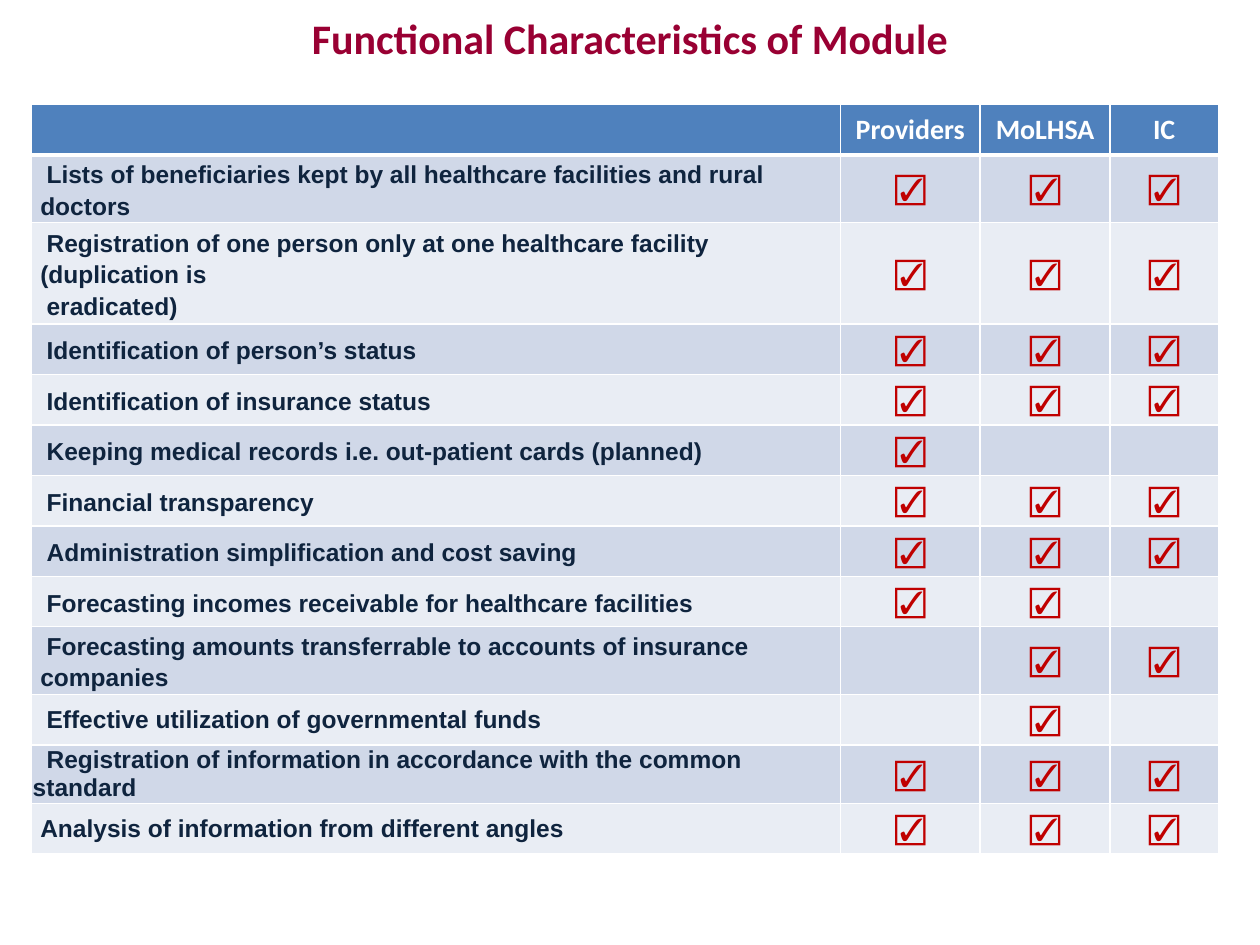
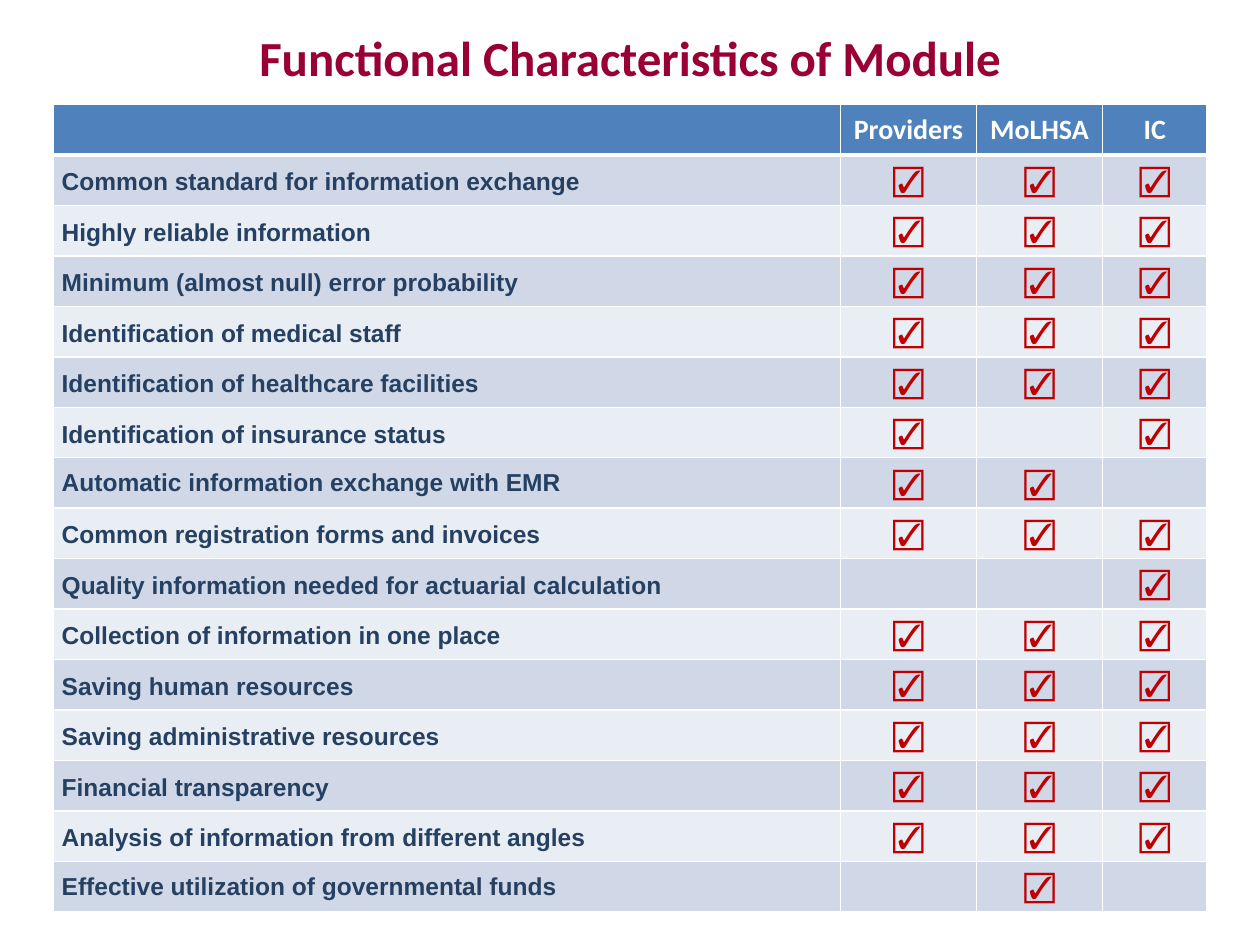
"""Build two checklist slides on the functional characteristics of a module."""
from lxml import etree
from pptx import Presentation, util as u
from pptx.dml import color
from pptx.enum import text as t
from pptx.oxml import ns

MAROON, RED, WHITE = "990033", "C00000", "FFFFFF"
HEADER_BLUE, BAND_DARK, BAND_LIGHT = "4F81BD", "D0D8E8", "E9EDF4"
TITLE = "Functional Characteristics of Module"
HEADERS = ["", "Providers", "MoLHSA", "IC"]
ROW_HEIGHT = 0.4

SPACED = dict(line=1.15, before=12)
PLAIN = dict(line=1.15)
COMPACT = dict(before=6)
INDENTED = dict(line=1.15, indent=0.05)
NARROW = dict(before=6, indent=0.11, inset=0.01)

CHECKLISTS = [
    dict(title_top=-0.33, title_size=24, left=0.25, columns=[6.42, 1.11, 1.03, 0.86], ink="0F243E", rows=[
        ("Lists of beneficiaries kept by all healthcare facilities and rural doctors", "YYY", INDENTED),
        ("Registration of one person only at one healthcare facility (duplication is\neradicated)", "YYY", INDENTED),
        ("Identification of person’s status", "YYY", INDENTED),
        ("Identification of insurance status", "YYY", INDENTED),
        ("Keeping medical records i.e. out-patient cards (planned)", "Y--", INDENTED),
        ("Financial transparency", "YYY", INDENTED),
        ("Administration simplification and cost saving", "YYY", INDENTED),
        ("Forecasting incomes receivable for healthcare facilities", "YY-", INDENTED),
        ("Forecasting amounts transferrable to accounts of insurance companies", "-YY", INDENTED),
        ("Effective utilization of governmental funds", "-Y-", NARROW),
        ("Registration of information in accordance with the common standard", "YYY", NARROW),
        ("Analysis of information from different angles", "YYY", COMPACT),
    ]),
    dict(title_top=-0.17, title_size=28, left=0.42, columns=[6.25, 1.08, 1, 0.83], ink="254061", rows=[
        ("Common standard for information exchange", "YYY", SPACED),
        ("Highly reliable information", "YYY", SPACED),
        ("Minimum (almost null) error probability", "YYY", SPACED),
        ("Identification of medical staff", "YYY", SPACED),
        ("Identification of healthcare facilities", "YYY", SPACED),
        ("Identification of insurance status", "Y-Y", SPACED),
        ("Automatic information exchange with EMR", "YY-", COMPACT),
        ("Common registration forms and invoices", "YYY", SPACED),
        ("Quality information needed for actuarial calculation", "--Y", SPACED),
        ("Collection of information in one place", "YYY", SPACED),
        ("Saving human resources", "YYY", SPACED),
        ("Saving administrative resources", "YYY", SPACED),
        ("Financial transparency", "YYY", PLAIN),
        ("Analysis of information from different angles", "YYY", PLAIN),
        ("Effective utilization of governmental funds", "-Y-", COMPACT),
    ]),
]


def write(frame, content, size, ink, font="Calibri", bold=True, align=t.PP_ALIGN.CENTER,
          line=None, before=0, indent=0):
    for number, part in enumerate(content.split("\n")):
        paragraph = frame.add_paragraph() if number else frame.paragraphs[0]
        paragraph.alignment = align
        paragraph.line_spacing = line
        paragraph.space_before = u.Pt(before)
        if indent:
            paragraph._p.get_or_add_pPr().set("indent", str(u.Inches(indent)))
        run = paragraph.add_run()
        run.text = part
        run.font.name, run.font.size, run.font.bold = font, u.Pt(size), bold
        run.font.color.rgb = color.RGBColor.from_string(ink)


def paint(cell, fill, bottom=1):
    properties = cell._tc.get_or_add_tcPr()
    for side, width in [("L", 1), ("R", 1), ("T", 1), ("B", bottom)]:
        border = etree.SubElement(properties, ns.qn(f"a:ln{side}"), w=str(u.Pt(width)))
        solid = etree.SubElement(border, ns.qn("a:solidFill"))
        etree.SubElement(solid, ns.qn("a:srgbClr"), val=WHITE)
    cell.fill.solid()
    cell.fill.fore_color.rgb = color.RGBColor.from_string(fill)
    cell.vertical_anchor = t.MSO_ANCHOR.MIDDLE


presentation = Presentation()
presentation.slide_width, presentation.slide_height = u.Inches(10), u.Inches(7.5)

for checklist in CHECKLISTS:
    slide = presentation.slides.add_slide(presentation.slide_layouts[6])
    title = slide.shapes.add_textbox(0, u.Inches(checklist["title_top"]), u.Inches(10), u.Inches(1.25))
    title.text_frame.word_wrap = True
    title.text_frame.vertical_anchor = t.MSO_ANCHOR.MIDDLE
    write(title.text_frame, TITLE, checklist["title_size"], MAROON)

    rows, columns = checklist["rows"], checklist["columns"]
    row_count = len(rows) + 1
    table = slide.shapes.add_table(
        row_count, len(columns), u.Inches(checklist["left"]), u.Inches(0.83),
        u.Inches(sum(columns)), u.Inches(ROW_HEIGHT * row_count)).table
    for column, width in zip(table.columns, columns):
        column.width = u.Inches(width)
    for row in table.rows:
        row.height = u.Inches(ROW_HEIGHT)

    for cell, header in zip(table.rows[0].cells, HEADERS):
        paint(cell, HEADER_BLUE, bottom=3)
        if header:
            write(cell.text_frame, header, 16, WHITE)

    for index, (label, marks, style) in enumerate(rows, 1):
        cells = list(table.rows[index].cells)
        for cell in cells:
            paint(cell, BAND_DARK if index % 2 else BAND_LIGHT)
        layout = dict(style)
        inset = layout.pop("inset", 0.07)
        cells[0].margin_left = cells[0].margin_right = u.Inches(inset)
        cells[0].margin_top = cells[0].margin_bottom = 0
        write(cells[0].text_frame, label, 14, checklist["ink"], font="Arial",
              align=t.PP_ALIGN.LEFT, **layout)
        for cell, mark in zip(cells[1:], marks):
            if mark == "Y":
                write(cell.text_frame, "☑", 18, RED, bold=False)

presentation.save("out.pptx")
